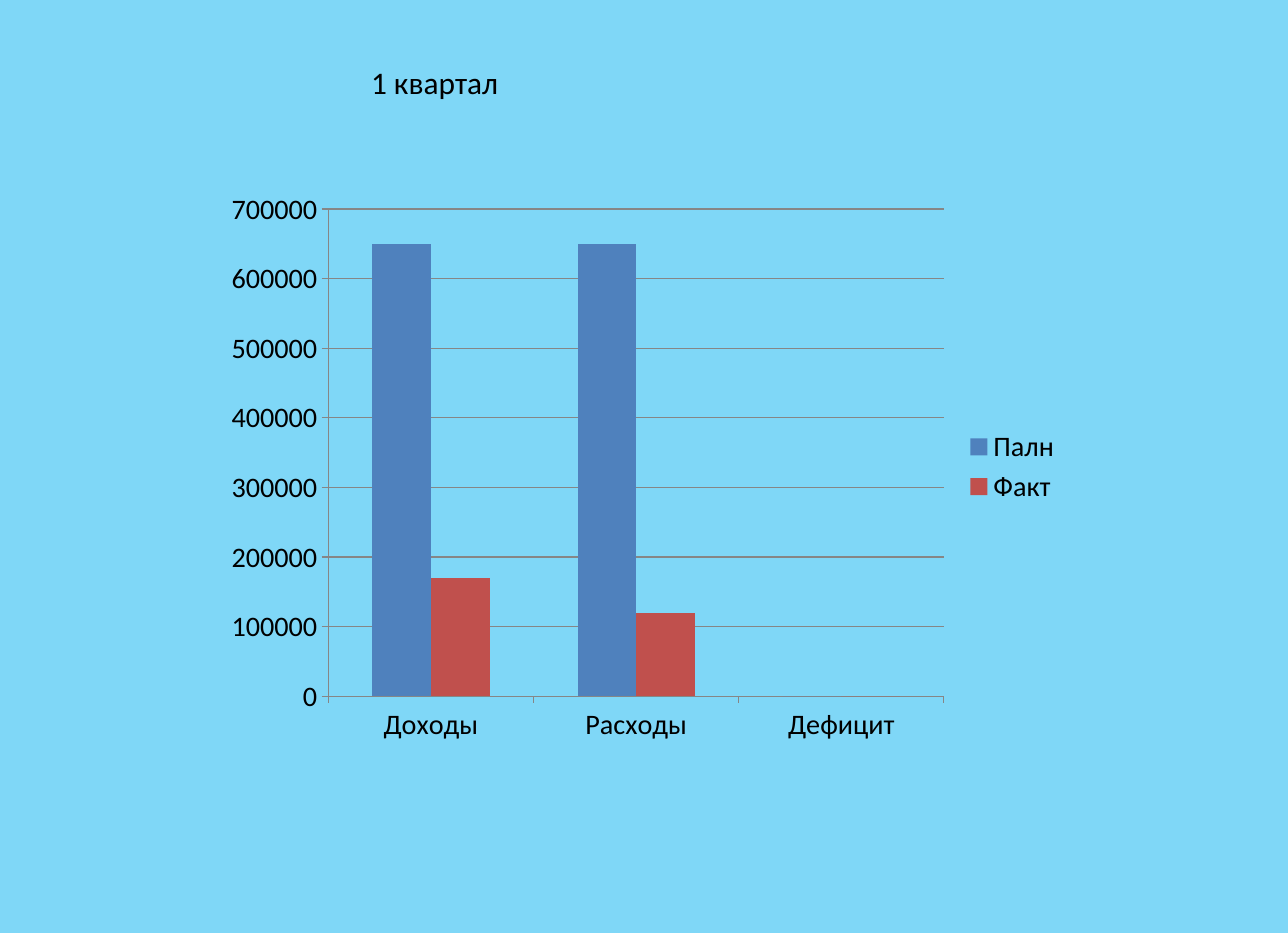
from dataclasses import dataclass

from pptx import Presentation
from pptx.chart.data import CategoryChartData
from pptx.dml.color import RGBColor
from pptx.enum.chart import XL_CHART_TYPE, XL_LEGEND_POSITION, XL_TICK_MARK
from pptx.enum.text import MSO_ANCHOR, PP_ALIGN
from pptx.util import Inches, Pt


@dataclass(frozen=True)
class Theme:
    """Colours, font and type sizes of the slide."""
    font: str = "Calibri"
    back: RGBColor = RGBColor(0x7F, 0xD7, 0xF7)
    text: RGBColor = RGBColor(0, 0, 0)
    line: RGBColor = RGBColor(0x86, 0x86, 0x86)
    plan: RGBColor = RGBColor(0x4F, 0x81, 0xBD)
    fact: RGBColor = RGBColor(0xC0, 0x50, 0x4D)
    title_size: Pt = Pt(20)
    chart_size: Pt = Pt(18)
    line_width: Pt = Pt(0.75)


THEME = Theme()
WIDTH, HEIGHT = Inches(11.42), Inches(8.27)
CATEGORIES = ["Доходы", "Расходы", "Дефицит"]
SERIES = [
    ("Палн", (650000, 650000, 0), THEME.plan),
    ("Факт", (170000, 120000, 0), THEME.fact),
]


def share(left, top, width, height):
    """Turn percentages of the slide's size into a box."""
    return (int(WIDTH * left / 100), int(HEIGHT * top / 100),
            int(WIDTH * width / 100), int(HEIGHT * height / 100))


def style_font(font, size):
    """Apply the theme's typeface and text colour."""
    font.name, font.size, font.bold = THEME.font, size, False
    font.color.rgb = THEME.text


def style_line(line):
    """Apply the theme's thin grey line."""
    line.color.rgb = THEME.line
    line.width = THEME.line_width


def add_title(s, box, text):
    """Place the slide title in the box, aligned left."""
    sp = s.shapes.title
    sp.left, sp.top, sp.width, sp.height = box
    tf = sp.text_frame
    tf.text = text
    tf.word_wrap = True
    tf.vertical_anchor = MSO_ANCHOR.TOP
    p = tf.paragraphs[0]
    p.alignment = PP_ALIGN.LEFT
    style_font(p.runs[0].font, THEME.title_size)


def add_budget_chart(s, box):
    """Place the clustered columns of plan and fact in the box."""
    data = CategoryChartData(number_format="General")
    data.categories = CATEGORIES
    for name, values, _ in SERIES:
        data.add_series(name, values)
    chart = s.shapes.add_chart(XL_CHART_TYPE.COLUMN_CLUSTERED, *box, data).chart
    chart.has_title = False
    style_font(chart.font, THEME.chart_size)

    plot = chart.plots[0]
    plot.vary_by_categories = False
    plot.gap_width, plot.overlap = 150, 0
    for series, (_, _, color) in zip(plot.series, SERIES):
        series.format.fill.solid()
        series.format.fill.fore_color.rgb = color

    for axis in (chart.category_axis, chart.value_axis):
        axis.major_tick_mark = XL_TICK_MARK.OUTSIDE
        axis.minor_tick_mark = XL_TICK_MARK.NONE
        style_line(axis.format.line)
    val = chart.value_axis
    val.minimum_scale, val.maximum_scale, val.major_unit = 0, 700000, 100000
    val.has_major_gridlines = True
    style_line(val.major_gridlines.format.line)

    chart.has_legend = True
    chart.legend.position = XL_LEGEND_POSITION.RIGHT
    chart.legend.include_in_layout = False


def main():
    """Build and save the slide."""
    prs = Presentation()
    prs.slide_width, prs.slide_height = WIDTH, HEIGHT
    s = prs.slides.add_slide(prs.slide_layouts[5])
    s.background.fill.solid()
    s.background.fill.fore_color.rgb = THEME.back
    add_budget_chart(s, share(16.64, 19.35, 66.64, 61.35))
    add_title(s, share(27.93, 6.17, 48.95, 5.32), "1 квартал")
    prs.save("out.pptx")


if __name__ == "__main__":
    main()
